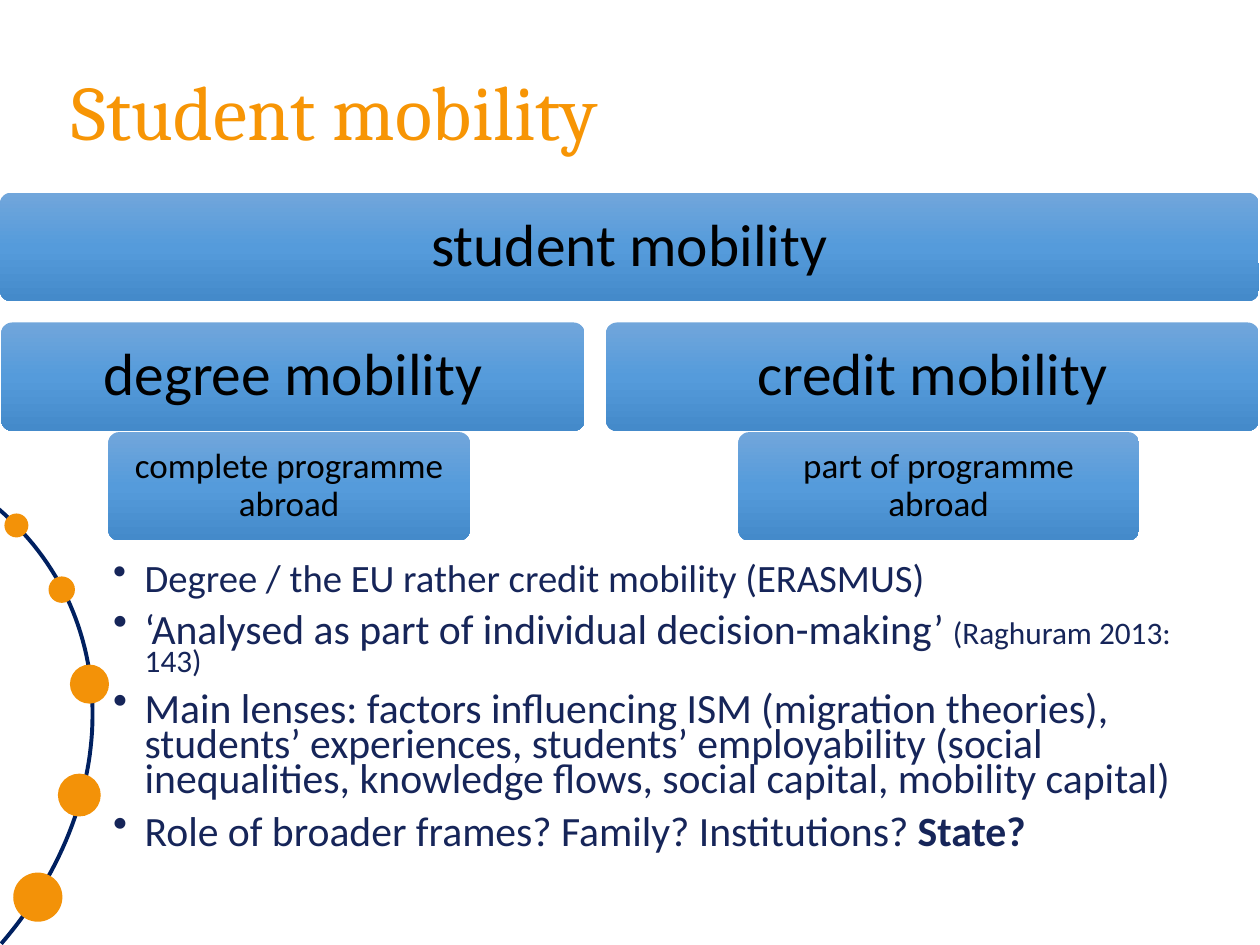
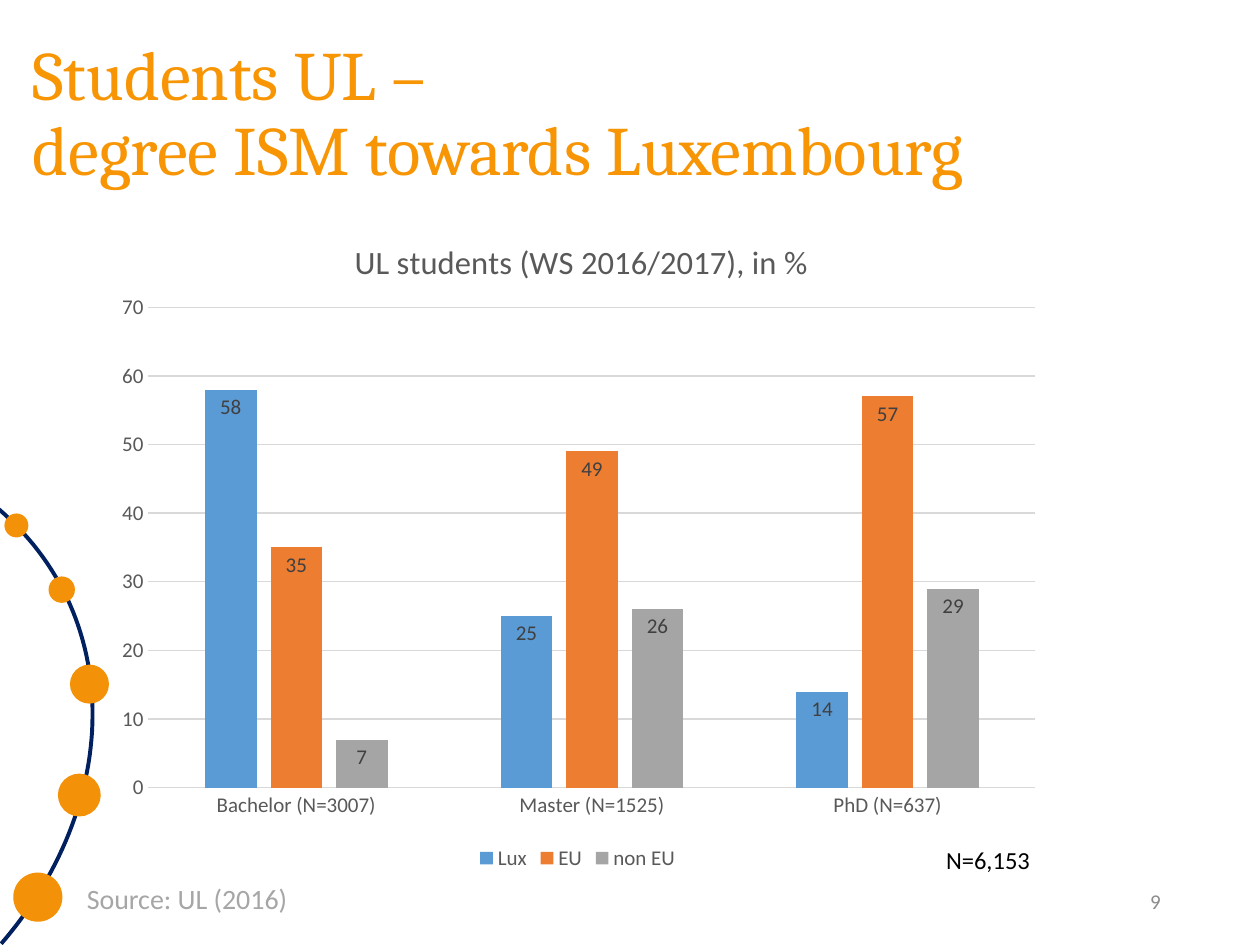
"""Build two slides on student mobility: a concept hierarchy with bullets and a column chart."""
import copy
from dataclasses import dataclass

import pptx
import pptx.chart.data
import pptx.dml.color
import pptx.enum.chart
import pptx.enum.shapes
import pptx.enum.text
import pptx.oxml
import pptx.oxml.ns
import pptx.util

Inches = pptx.util.Inches
Pt = pptx.util.Pt
Align = pptx.enum.text.PP_ALIGN
Anchor = pptx.enum.text.MSO_ANCHOR
Preset = pptx.enum.shapes.MSO_SHAPE
qn = pptx.oxml.ns.qn


@dataclass(frozen=True)
class Theme:
    title_font: str = "Cambria"
    body_font: str = "Calibri"
    title: str = "F79505"
    body: str = "162559"
    black: str = "000000"
    arc: str = "002060"
    dot: str = "F39208"
    chart_text: str = "595959"
    label: str = "404040"
    grid: str = "D9D9D9"
    source: str = "A6A6A6"
    number: str = "8C8C8C"
    box_gradient: tuple = ("71A6DB", "559BDB", "448ACA")
    level_size: float = 34
    detail_size: float = 20
    chart_title_size: float = 18.6
    chart_size: float = 12
    note_size: float = 14
    source_size: float = 16
    number_size: float = 12


THEME = Theme()

ARC = ((-0.01, 4.04), (1.01, 4.92), (0.95, 6.4), (0.01, 7.49))
ARC_STEPS = 60
DOTS = [(0.13, 4.17, 0.19), (0.49, 4.68, 0.21), (0.71, 5.43, 0.31), (0.63, 6.31, 0.34), (0.3, 7.12, 0.39)]

MOBILITY_TITLE = ("Student mobility", 44, (0.47, 0.29, 9, 1.25))
BOX_TOPS = (1.53, 2.56, 3.43)
BOX_HEIGHT = 0.86
BOXES = [
    ("student mobility", 0, 0, 9.99),
    ("degree mobility", 1, 0.01, 4.63),
    ("credit mobility", 1, 4.81, 5.18),
    ("complete programme abroad", 2, 0.86, 2.87),
    ("part of programme abroad", 2, 5.86, 3.18),
]
BULLETS_AREA = (0.8, 4.45, 9.01, 2.6)
BULLETS = [
    [("Degree / the EU rather credit mobility (ERASMUS)", 22.1, False)],
    [("‘Analysed as part of individual decision-making’ ", 23.8, False), ("(Raghuram 2013: 143)", 17.9, False)],
    [("Main lenses: factors influencing ISM (migration theories), students’ experiences, students’ "
      "employability (social inequalities, knowledge flows, social capital, mobility capital)", 23.8, False)],
    [("Role of broader frames? Family? Institutions? ", 23.8, False), ("State?", 23.8, True)],
]

STUDENTS_TITLE = ("Students UL – \vdegree ISM towards Luxembourg", 39.6, (0.16, 0.29, 9.67, 1.25))
CHART_AREA = (0.8, 1.58, 7.57, 5.37)
CHART_TITLE = "UL students (WS 2016/2017), in %"
CATEGORIES = ["Bachelor (N=3007)", "Master (N=1525)", "PhD (N=637)"]
SERIES = [
    ("Lux", (58, 25, 14), "5B9BD5"),
    ("EU", (35, 49, 57), "ED7D31"),
    ("non EU", (7, 26, 29), "A5A5A5"),
]
NOTES = [
    ("9", THEME.number_size, THEME.number, (7.06, 6.95, 2.25, 0.4), Align.RIGHT, Anchor.MIDDLE),
    ("N=6,153", THEME.note_size, THEME.black, (7.41, 6.66, 0.92, 0.34), Align.LEFT, Anchor.TOP),
    ("Source: UL (2016)", THEME.source_size, THEME.source, (0.59, 6.95, 1.82, 0.37), Align.LEFT, Anchor.TOP),
]


def rgb(value):
    return pptx.dml.color.RGBColor.from_string(value)


def inches(lengths):
    return [Inches(length) for length in lengths]


def style_font(font, size, color, name=THEME.body_font):
    font.name = name
    font.size = Pt(size)
    font.color.rgb = rgb(color)


def add_text(slide, text, size, color, area, align=Align.LEFT, anchor=Anchor.TOP, name=THEME.body_font):
    frame = slide.shapes.add_textbox(*inches(area)).text_frame
    frame.word_wrap = True
    frame.vertical_anchor = anchor
    frame.text = text
    paragraph = frame.paragraphs[0]
    paragraph.alignment = align
    style_font(paragraph.font, size, color, name)
    return paragraph


def add_decoration(slide):
    def arc_point(t):
        weights = ((1 - t) ** 3, 3 * t * (1 - t) ** 2, 3 * t ** 2 * (1 - t), t ** 3)
        return tuple(Inches(sum(w * point[axis] for w, point in zip(weights, ARC))) for axis in (0, 1))

    points = [arc_point(step / ARC_STEPS) for step in range(ARC_STEPS + 1)]
    builder = slide.shapes.build_freeform(*points[0])
    builder.add_line_segments(points[1:], close=False)
    arc = builder.convert_to_shape()
    arc.shadow.inherit = False
    arc.fill.background()
    arc.line.color.rgb = rgb(THEME.arc)
    arc.line.width = Pt(2.25)
    for x, y, size in DOTS:
        dot = slide.shapes.add_shape(Preset.OVAL, *inches((x - size / 2, y - size / 2, size, size)))
        dot.shadow.inherit = False
        dot.fill.solid()
        dot.fill.fore_color.rgb = rgb(THEME.dot)
        dot.line.fill.background()


def add_slide(presentation, title):
    slide = presentation.slides.add_slide(presentation.slide_layouts[6])
    add_decoration(slide)
    text, size, area = title
    paragraph = add_text(slide, text, size, THEME.title, area, anchor=Anchor.MIDDLE, name=THEME.title_font)
    paragraph.line_spacing = 0.9
    return slide


def fill_gradient(shape, colors):
    shape.fill.gradient()
    shape.fill.gradient_angle = 270
    stop_list = shape._element.spPr.find(".//" + qn("a:gsLst"))
    stop_list.insert(1, copy.deepcopy(stop_list[0]))
    for index, (stop, color) in enumerate(zip(shape.fill.gradient_stops, colors)):
        stop.color.rgb = rgb(color)
        stop.position = index / (len(colors) - 1)


def add_box(slide, text, level, left, width):
    box = slide.shapes.add_shape(Preset.ROUNDED_RECTANGLE, *inches((left, BOX_TOPS[level], width, BOX_HEIGHT)))
    box.adjustments[0] = 0.1
    box.shadow.inherit = False
    box.line.fill.background()
    fill_gradient(box, THEME.box_gradient)
    is_detail = level == 2
    frame = box.text_frame
    frame.word_wrap = True
    frame.vertical_anchor = Anchor.MIDDLE
    margin = Inches(0.11 if is_detail else 0.17)
    frame.margin_left = frame.margin_right = frame.margin_top = frame.margin_bottom = margin
    frame.text = text
    paragraph = frame.paragraphs[0]
    paragraph.alignment = Align.CENTER
    paragraph.line_spacing = 0.9
    style_font(paragraph.font, THEME.detail_size if is_detail else THEME.level_size, THEME.black)


def add_bullets(slide):
    frame = slide.shapes.add_textbox(*inches(BULLETS_AREA)).text_frame
    frame.word_wrap = True
    for index, runs in enumerate(BULLETS):
        paragraph = frame.add_paragraph() if index else frame.paragraphs[0]
        properties = paragraph._p.get_or_add_pPr()
        properties.set("marL", str(Inches(0.25)))
        properties.set("indent", str(-Inches(0.25)))
        pptx.oxml.ns.qn("a:buChar")
        bullet = properties.makeelement(qn("a:buChar"), {"char": "•"})
        properties.append(bullet)
        paragraph.line_spacing = 0.7
        paragraph.space_before = Pt(10)
        style_font(paragraph.font, runs[0][1], THEME.body)
        for text, size, bold in runs:
            run = paragraph.add_run()
            run.text = text
            run.font.size = Pt(size)
            run.font.bold = bold


def place(element, index, **fractions):
    for old in element.findall(qn("c:layout")):
        element.remove(old)
    modes = '<c:xMode val="edge"/><c:yMode val="edge"/>'
    values = "".join(f'<c:{key} val="{value}"/>' for key, value in fractions.items())
    target = '<c:layoutTarget val="inner"/>' if "w" in fractions else ""
    layout = pptx.oxml.parse_xml(
        f'<c:layout {pptx.oxml.ns.nsdecls("c")}><c:manualLayout>{target}{modes}{values}'
        "</c:manualLayout></c:layout>")
    element.insert(index, layout)


def style_axis(axis):
    axis.major_tick_mark = axis.minor_tick_mark = pptx.enum.chart.XL_TICK_MARK.NONE
    style_font(axis.tick_labels.font, THEME.chart_size, THEME.chart_text)


def style_line(line):
    line.color.rgb = rgb(THEME.grid)
    line.width = Pt(0.75)


def add_students_chart(slide):
    data = pptx.chart.data.CategoryChartData()
    data.categories = CATEGORIES
    for name, values, _ in SERIES:
        data.add_series(name, values)
    chart_type = pptx.enum.chart.XL_CHART_TYPE.COLUMN_CLUSTERED
    chart = slide.shapes.add_chart(chart_type, *inches(CHART_AREA), data).chart
    style_font(chart.font, THEME.chart_size, THEME.chart_text)

    title_frame = chart.chart_title.text_frame
    title_frame.text = CHART_TITLE
    title_font = title_frame.paragraphs[0].font
    style_font(title_font, THEME.chart_title_size, THEME.chart_text)
    title_font.bold = False
    place(chart.chart_title._element, 1, x=0.26, y=0.05)
    place(chart._chartSpace.chart.plotArea, 0, x=0.05, y=0.16, w=0.93, h=0.71)

    chart.has_legend = True
    chart.legend.position = pptx.enum.chart.XL_LEGEND_POSITION.BOTTOM
    chart.legend.include_in_layout = False
    style_font(chart.legend.font, THEME.chart_size, THEME.chart_text)

    style_axis(chart.category_axis)
    style_line(chart.category_axis.format.line)
    value_axis = chart.value_axis
    style_axis(value_axis)
    value_axis.minimum_scale, value_axis.maximum_scale, value_axis.major_unit = 0, 70, 10
    value_axis.format.line.fill.background()
    style_line(value_axis.major_gridlines.format.line)

    plot = chart.plots[0]
    plot.gap_width = 219
    plot.overlap = -27
    plot.vary_by_categories = False
    for series, (_, _, color) in zip(plot.series, SERIES):
        series.format.fill.solid()
        series.format.fill.fore_color.rgb = rgb(color)
        labels = series.data_labels
        labels.show_value = True
        labels.position = pptx.enum.chart.XL_LABEL_POSITION.INSIDE_END
        style_font(labels.font, THEME.chart_size, THEME.label)


def main():
    presentation = pptx.Presentation()
    presentation.slide_width, presentation.slide_height = Inches(10), Inches(7.5)

    mobility_slide = add_slide(presentation, MOBILITY_TITLE)
    for box in BOXES:
        add_box(mobility_slide, *box)
    add_bullets(mobility_slide)

    students_slide = add_slide(presentation, STUDENTS_TITLE)
    add_students_chart(students_slide)
    for note in NOTES:
        add_text(students_slide, *note)

    presentation.save("out.pptx")


if __name__ == "__main__":
    main()
